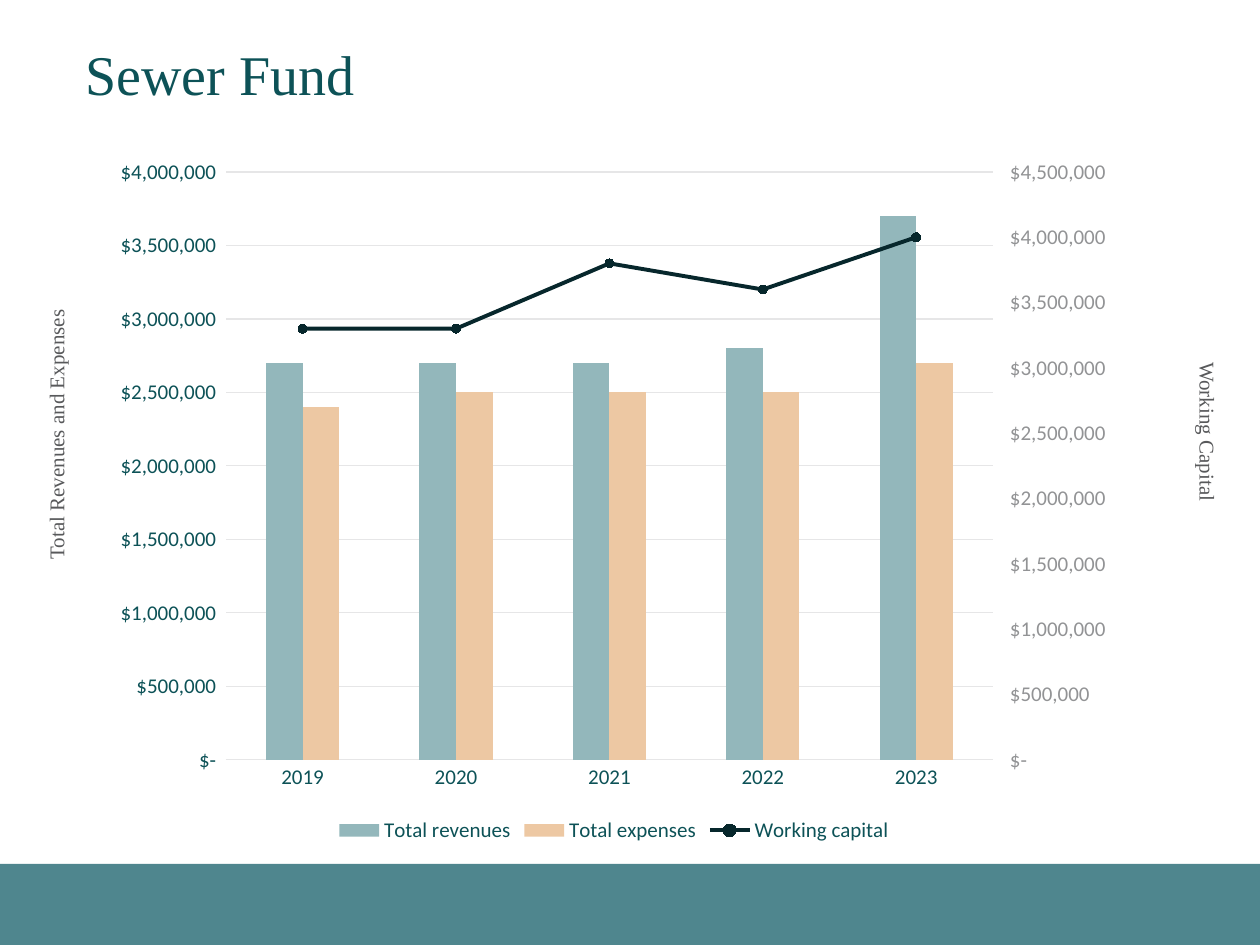
from lxml import etree
from pptx import Presentation
from pptx import util as u
from pptx.chart.data import CategoryChartData
from pptx.dml.color import RGBColor
from pptx.enum import chart as ch, shapes, text
from pptx.oxml import parse_xml
from pptx.oxml.ns import nsdecls, qn

PX = 914400 / 126
TEAL, GREY, PALE, INK = "0D5257", "58595B", "E6E6E7", "07272C"
SERIF, SANS = "Times New Roman", "Calibri"
MONEY = '_("$"* #,##0_);_("$"* \\(#,##0\\);_("$"* "-"_);_(@_)'
YEARS = ["2019", "2020", "2021", "2022", "2023"]
FUNDS = [
    ("Total revenues", "93B7BB", [2700000, 2700000, 2700000, 2800000, 3700000]),
    ("Total expenses", "EDC8A3", [2400000, 2500000, 2500000, 2500000, 2700000]),
    ("Working capital", INK, [3300000, 3300000, 3800000, 3600000, 4000000]),
]


def px(n):
    """Turn px into EMU."""
    return u.Emu(round(n * PX))


def hue(code):
    """Turn a hex string into a colour."""
    return RGBColor.from_string(code)


def style(font, size, code, face):
    """Set the size, colour and face of a font."""
    font.size, font.name = u.Pt(size), face
    font.color.rgb = hue(code)


def label(slide, box, words, size, code, turn=0, space=None):
    """Place one line of serif text, turned if asked."""
    shape = slide.shapes.add_textbox(*map(px, box))
    shape.rotation = turn
    frame = shape.text_frame
    frame.word_wrap = False
    frame.vertical_anchor = text.MSO_ANCHOR.MIDDLE
    para = frame.paragraphs[0]
    if space:
        para.line_spacing = space
    run = para.add_run()
    run.text = words
    style(run.font, size, code, SERIF)


def band(slide, box):
    """Draw the footer band."""
    shape = slide.shapes.add_shape(shapes.MSO_SHAPE.RECTANGLE, *map(px, box))
    shape.shadow.inherit = False
    shape.fill.solid()
    shape.fill.fore_color.rgb = hue("4F868E")
    shape.line.fill.background()


def split(chart):
    """Move the last series to a line on a second axis."""
    area = chart._chartSpace.chart.plotArea
    bars = area.find(qn("c:barChart"))
    ser = bars.findall(qn("c:ser"))[-1]
    flag = ser.find(qn("c:invertIfNegative"))
    if flag is not None:
        ser.remove(flag)
    line = parse_xml(
        f'<c:lineChart {nsdecls("c")}><c:grouping val="standard"/>'
        '<c:varyColors val="0"/><c:marker val="1"/>'
        '<c:axId val="5001"/><c:axId val="5002"/></c:lineChart>')
    line.insert(2, ser)
    bars.addnext(line)
    code = MONEY.replace('"', "&quot;")
    axes = parse_xml(
        f'<c:plotArea {nsdecls("c", "a")}>'
        '<c:valAx><c:axId val="5002"/><c:scaling><c:orientation val="minMax"/>'
        '<c:max val="4500000"/><c:min val="0"/></c:scaling>'
        '<c:delete val="0"/><c:axPos val="r"/>'
        f'<c:numFmt formatCode="{code}" sourceLinked="0"/>'
        '<c:majorTickMark val="out"/><c:minorTickMark val="none"/>'
        '<c:tickLblPos val="nextTo"/><c:spPr><a:ln><a:noFill/></a:ln></c:spPr>'
        '<c:txPr><a:bodyPr/><a:p><a:pPr><a:defRPr sz="1200"><a:solidFill>'
        '<a:srgbClr val="929395"/></a:solidFill>'
        f'<a:latin typeface="{SANS}"/></a:defRPr></a:pPr>'
        '<a:endParaRPr lang="en-US"/></a:p></c:txPr>'
        '<c:crossAx val="5001"/><c:crosses val="max"/>'
        '<c:crossBetween val="between"/><c:majorUnit val="500000"/></c:valAx>'
        '<c:catAx><c:axId val="5001"/><c:scaling>'
        '<c:orientation val="minMax"/></c:scaling><c:delete val="1"/>'
        '<c:axPos val="b"/><c:crossAx val="5002"/></c:catAx></c:plotArea>')
    last = area.findall(qn("c:valAx"))[-1]
    for axis in reversed(list(axes)):
        last.addnext(axis)


def fit(chart, box, plot):
    """Fix the inner plot area within the chart box."""
    left, top, wide, high = box
    x, y, w, h = plot
    area = chart._chartSpace.chart.plotArea
    old = area.find(qn("c:layout"))
    if old is not None:
        area.remove(old)
    lay = etree.Element(qn("c:layout"))
    man = etree.SubElement(lay, qn("c:manualLayout"))
    parts = [("layoutTarget", "inner"), ("xMode", "edge"), ("yMode", "edge"),
             ("x", (x - left) / wide), ("y", (y - top) / high),
             ("w", w / wide), ("h", h / high)]
    for name, val in parts:
        etree.SubElement(man, qn("c:" + name)).set("val", str(val))
    area.insert(0, lay)


def graph(slide, box, plot):
    """Chart the bars, the line and both money axes."""
    data = CategoryChartData(number_format=MONEY)
    data.categories = YEARS
    for name, _, vals in FUNDS:
        data.add_series(name, vals)
    kind = ch.XL_CHART_TYPE.COLUMN_CLUSTERED
    chart = slide.shapes.add_chart(kind, *map(px, box), data).chart
    style(chart.font, 10, GREY, SANS)
    chart.has_title = False
    chart.has_legend = True
    chart.legend.position = ch.XL_LEGEND_POSITION.BOTTOM
    chart.legend.include_in_layout = False
    style(chart.legend.font, 12, TEAL, SANS)

    cat, val = chart.category_axis, chart.value_axis
    for axis in (cat, val):
        axis.major_tick_mark = ch.XL_TICK_MARK.NONE
        style(axis.tick_labels.font, 12, TEAL, SANS)
    val.minimum_scale, val.maximum_scale = 0, 4000000
    val.major_unit = 500000
    val.tick_labels.number_format = MONEY
    val.tick_labels.number_format_is_linked = False
    val.format.line.fill.background()
    val.has_major_gridlines = True
    for rule in (cat.format.line, val.major_gridlines.format.line):
        rule.color.rgb, rule.width = hue(PALE), u.Pt(0.75)

    split(chart)
    fit(chart, box, plot)
    bars, line = chart.plots
    bars.gap_width, bars.overlap = 219, 0
    bars.vary_by_categories = False
    for ser, (_, code, _) in zip(bars.series, FUNDS):
        ser.format.fill.solid()
        ser.format.fill.fore_color.rgb = hue(code)
    trend = line.series[0]
    trend.smooth = False
    trend.format.line.color.rgb = hue(INK)
    trend.format.line.width = u.Pt(2.25)
    mark = trend.marker
    mark.style, mark.size = ch.XL_MARKER_STYLE.CIRCLE, 5
    mark.format.fill.solid()
    mark.format.fill.fore_color.rgb = hue("93B7BB")
    mark.format.line.color.rgb = hue(INK)


def main():
    """Build the slide and save it."""
    deck = Presentation()
    deck.slide_width, deck.slide_height = px(1260), px(945)
    slide = deck.slides.add_slide(deck.slide_layouts[6])
    band(slide, (0, 864, 1260, 81))
    label(slide, (73, 29, 299, 97), "Sewer Fund", 32, TEAL, space=0.9)
    graph(slide, (96, 146, 1036, 702), (226, 172, 767, 588))
    label(slide, (1125, 414, 166, 38), "Working Capital", 12, GREY, 90)
    label(slide, (-83, 414, 278, 38), "Total Revenues and Expenses", 12, GREY, 270)
    deck.save("out.pptx")


if __name__ == "__main__":
    main()
